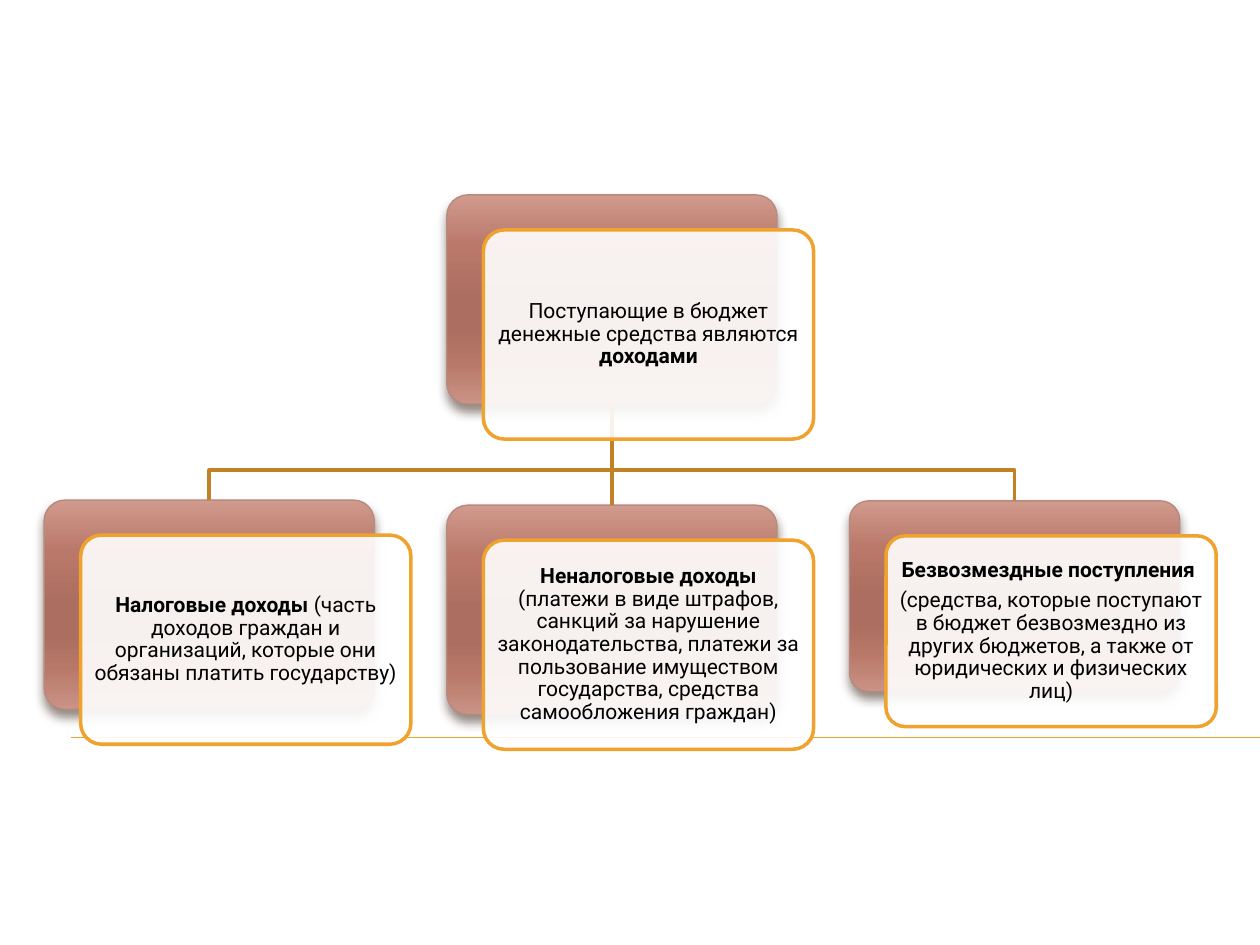
from lxml import etree
from pptx import Presentation
from pptx.dml.color import RGBColor
from pptx.enum.shapes import MSO_CONNECTOR, MSO_SHAPE
from pptx.enum.text import MSO_ANCHOR, PP_ALIGN
from pptx.oxml import parse_xml
from pptx.oxml.ns import qn
from pptx.util import Pt

STRAIGHT = MSO_CONNECTOR.STRAIGHT
ROUNDED = MSO_SHAPE.ROUNDED_RECTANGLE
MIDDLE = MSO_ANCHOR.MIDDLE
CENTER = PP_ALIGN.CENTER
TOP, BOTTOM = 0, 2
DRAWING = 'xmlns:a="http://schemas.openxmlformats.org/drawingml/2006/main"'

CARD_WIDTH, CARD_HEIGHT = 188.7, 119.5
OFFSET_X, OFFSET_Y = 20.9, 20
LEFT, STEP = 25.2, 230.1
BRANCH_Y = 268.6


def color(value):
    return RGBColor.from_string(value)


class Diagram:
    font = {"name": "Roboto", "size": Pt(12)}
    paragraph_format = {"alignment": CENTER, "line_spacing": 0.9,
                        "space_after": Pt(4.2)}
    accent, branch, edge, shade = "F0A22E", "C08225", "B58B80", "4E3B30"
    gradient = [(0, "D09A8D"), (25, "B97869"), (50, "AB6E60"),
                (65, "AB6E60"), (80, "B87868"), (100, "CA9386")]

    def __init__(self, slide):
        self.slide = slide

    def outline(self, shape, value, width):
        shape.line.color.rgb = color(value)
        shape.line.width = Pt(width)

    def connector(self, start, end, value, width):
        line = self.slide.shapes.add_connector(
            STRAIGHT, *(Pt(number) for number in (*start, *end)))
        self.outline(line, value, width)
        etree.SubElement(line._element.spPr, qn("a:effectLst"))
        return line

    def elbow(self, points):
        start, *rest = [(Pt(x), Pt(y)) for x, y in points]
        builder = self.slide.shapes.build_freeform(*start)
        builder.add_line_segments(rest, close=False)
        shape = builder.convert_to_shape()
        shape.shadow.inherit = False
        shape.fill.background()
        self.outline(shape, self.branch, 2)

    def rounded(self, left, top, height):
        shape = self.slide.shapes.add_shape(
            ROUNDED, Pt(left), Pt(top), Pt(CARD_WIDTH), Pt(height))
        shape.adjustments[0] = 0.1
        shape.shadow.inherit = False
        return shape

    def back_panel(self, left, top, height):
        shape = self.rounded(left, top, height)
        shape.fill.gradient()
        shape.fill.gradient_angle = 270
        properties = shape._element.spPr
        stops = properties.find(".//" + qn("a:gsLst"))
        stops.clear()
        for position, value in self.gradient:
            stop = etree.SubElement(stops, qn("a:gs"), pos=str(position * 1000))
            etree.SubElement(stop, qn("a:srgbClr"), val=value)
        self.outline(shape, self.edge, 0.79)
        properties.find(qn("a:effectLst")).append(parse_xml(
            f'<a:outerShdw {DRAWING} blurRad="{Pt(6)}" dist="{Pt(4)}" '
            f'dir="5400000" rotWithShape="0"><a:srgbClr val="{self.shade}">'
            '<a:alpha val="60000"/></a:srgbClr></a:outerShdw>'))
        return shape

    def text_card(self, left, top, height, paragraphs):
        shape = self.rounded(left, top, height)
        shape.fill.solid()
        shape.fill.fore_color.rgb = color("FFFFFF")
        fill = shape._element.spPr.find(".//" + qn("a:srgbClr"))
        etree.SubElement(fill, qn("a:alpha"), val="90000")
        self.outline(shape, self.accent, 2)

        frame = shape.text_frame
        frame.word_wrap = True
        frame.vertical_anchor = MIDDLE
        for side in ("left", "top", "right", "bottom"):
            setattr(frame, f"margin_{side}", Pt(3.6))
        for index, runs in enumerate(paragraphs):
            paragraph = frame.add_paragraph() if index else frame.paragraphs[0]
            for name, value in self.paragraph_format.items():
                setattr(paragraph, name, value)
            for text, bold in runs:
                run = paragraph.add_run()
                run.text = text
                run.font.bold = bold
                run.font.color.rgb = color("000000")
                for name, value in self.font.items():
                    setattr(run.font, name, value)


def main():
    presentation = Presentation()
    presentation.slide_width, presentation.slide_height = Pt(720), Pt(540)
    slide = presentation.slides.add_slide(presentation.slide_layouts[6])
    diagram = Diagram(slide)

    # Cards: column, top, height, paragraphs of (text, bold); the root is first
    cards = [
        (1, 111.4, CARD_HEIGHT, [
            [("Поступающие в бюджет денежные средства являются ", False),
             ("доходами", True)]]),
        (0, 285.8, CARD_HEIGHT, [
            [("Налоговые доходы ", True),
             ("(часть доходов граждан и организаций, которые они обязаны "
              "платить государству)", False)]]),
        (1, 288.7, CARD_HEIGHT, [
            [("Неналоговые доходы ", True),
             ("(платежи в виде штрафов, санкций за нарушение "
              "законодательства, платежи за пользование имуществом "
              "государства, средства самообложения граждан)", False)]]),
        (2, 286.2, 109, [
            [("Безвозмездные поступления ", True)],
            [("(средства, которые поступают в бюджет безвозмездно из других "
              "бюджетов, а также от юридических и физических лиц)", False)]]),
    ]

    # Thin rule behind the cards
    diagram.connector((40.4, 421.3), (720, 421.3), diagram.accent, 0.75)

    # Back panels
    panels = [diagram.back_panel(LEFT + column * STEP, top, height)
              for column, top, height, _ in cards]

    # Branches from the root to each child
    root_column, root_top, root_height, _ = cards[0]
    middle = LEFT + CARD_WIDTH / 2
    start = (middle + root_column * STEP, root_top + root_height)
    for (column, top, _, _), panel in zip(cards[1:], panels[1:]):
        end = (middle + column * STEP, top)
        if column == root_column:
            trunk = diagram.connector(start, end, diagram.branch, 2)
            trunk.begin_connect(panels[0], BOTTOM)
            trunk.end_connect(panel, TOP)
        else:
            diagram.elbow([start, (start[0], BRANCH_Y), (end[0], BRANCH_Y), end])

    # Front cards with text
    for column, top, height, paragraphs in cards:
        diagram.text_card(LEFT + column * STEP + OFFSET_X, top + OFFSET_Y,
                          height, paragraphs)

    presentation.save("out.pptx")


if __name__ == "__main__":
    main()
